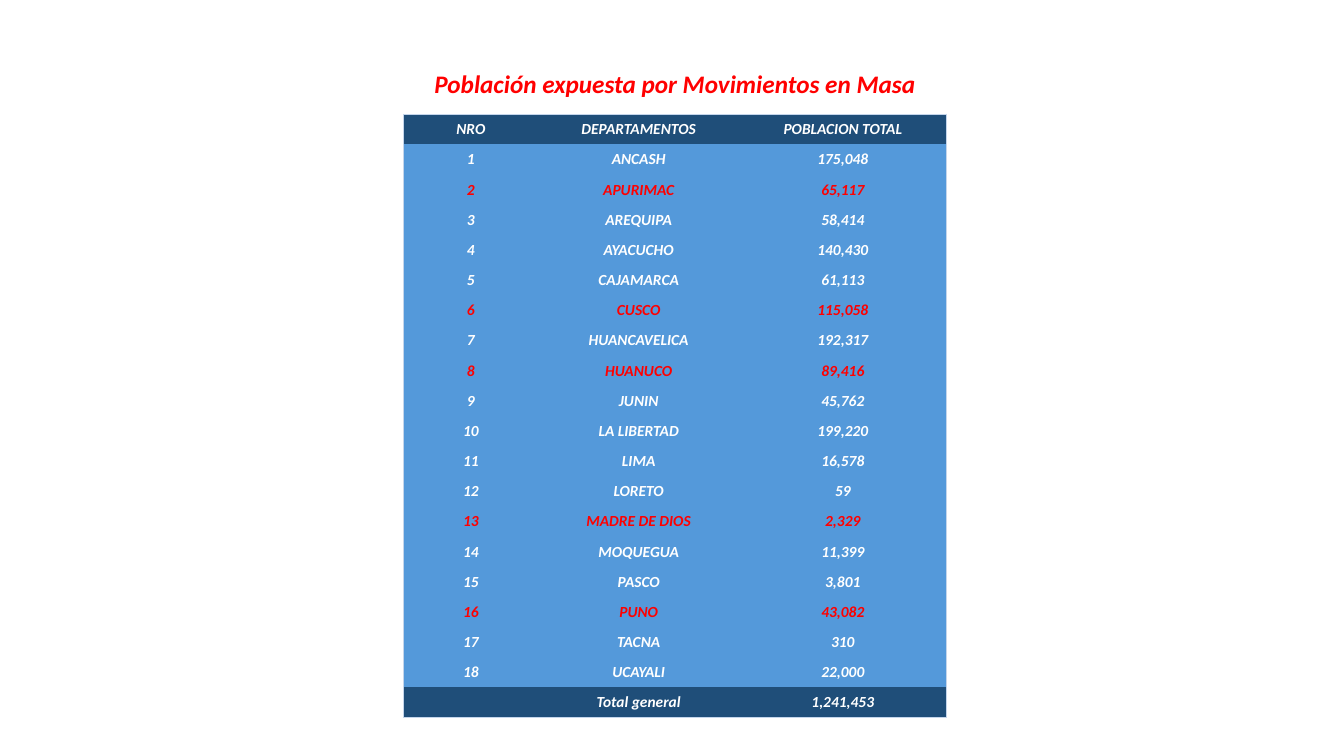
from lxml.etree import SubElement
from pptx import Presentation
from pptx.dml.color import RGBColor
from pptx.enum.text import MSO_ANCHOR, MSO_AUTO_SIZE, PP_ALIGN
from pptx.oxml.ns import qn
from pptx.util import Inches, Pt

COLORS = {
    "red": "FF0000",
    "white": "FFFFFF",
    "navy": "1F4E79",
    "blue": "5499DA",
    "border": "C4D5EB",
}
HEADER = ("NRO", "DEPARTAMENTOS", "POBLACION TOTAL")
DEPARTMENTS = [
    ("ANCASH", "175,048"),
    ("APURIMAC", "65,117"),
    ("AREQUIPA", "58,414"),
    ("AYACUCHO", "140,430"),
    ("CAJAMARCA", "61,113"),
    ("CUSCO", "115,058"),
    ("HUANCAVELICA", "192,317"),
    ("HUANUCO", "89,416"),
    ("JUNIN", "45,762"),
    ("LA LIBERTAD", "199,220"),
    ("LIMA", "16,578"),
    ("LORETO", "59"),
    ("MADRE DE DIOS", "2,329"),
    ("MOQUEGUA", "11,399"),
    ("PASCO", "3,801"),
    ("PUNO", "43,082"),
    ("TACNA", "310"),
    ("UCAYALI", "22,000"),
]
TOTAL = ("", "Total general", "1,241,453")
HIGHLIGHTED = {"APURIMAC", "CUSCO", "HUANUCO", "MADRE DE DIOS", "PUNO"}
COLUMN_WIDTHS = (1.34, 1.99, 2.06)
TABLE_HEIGHT = 5.99


def write_text(text_frame, text, size, color):
    paragraph = text_frame.paragraphs[0]
    paragraph.text = text
    paragraph.alignment = PP_ALIGN.CENTER
    font = paragraph.font
    font.name = "Calibri"
    font.size = Pt(size)
    font.bold = font.italic = True
    font.color.rgb = RGBColor.from_string(COLORS[color])


def add_title(slide, text):
    box = slide.shapes.add_textbox(Inches(4.18), Inches(0.63), Inches(5.03), Inches(0.4))
    box.text_frame.word_wrap = False
    box.text_frame.auto_size = MSO_AUTO_SIZE.SHAPE_TO_FIT_TEXT
    write_text(box.text_frame, text, 18, "red")


def set_borders(cell, outer_sides):
    properties = cell._tc.get_or_add_tcPr()
    for side in "LRTB":
        line = SubElement(properties, qn(f"a:ln{side}"), w=str(Pt(0.5)))
        if side in outer_sides:
            fill = SubElement(line, qn("a:solidFill"))
            SubElement(fill, qn("a:srgbClr"), val=COLORS["border"])
        else:
            SubElement(line, qn("a:noFill"))


def format_cell(cell, text, fill, color, outer_sides):
    set_borders(cell, outer_sides)
    cell.fill.solid()
    cell.fill.fore_color.rgb = RGBColor.from_string(COLORS[fill])
    cell.margin_left = cell.margin_right = cell.margin_top = Inches(0.01)
    cell.margin_bottom = 0
    cell.vertical_anchor = MSO_ANCHOR.MIDDLE
    write_text(cell.text_frame, text, 11, color)


def add_population_table(slide):
    numbered = [(str(number), *entry) for number, entry in enumerate(DEPARTMENTS, 1)]
    rows = [HEADER, *numbered, TOTAL]
    last_row, last_column = len(rows) - 1, len(HEADER) - 1
    table = slide.shapes.add_table(
        len(rows), len(HEADER), Inches(4), Inches(1.13),
        Inches(sum(COLUMN_WIDTHS)), Inches(TABLE_HEIGHT),
    ).table
    table.first_row = table.horz_banding = False
    for column, width in zip(table.columns, COLUMN_WIDTHS):
        column.width = Inches(width)

    for row_index, row in enumerate(rows):
        fill = "navy" if row_index in (0, last_row) else "blue"
        color = "red" if row[1] in HIGHLIGHTED else "white"
        row_sides = {0: "T", last_row: "B"}.get(row_index, "")
        for column_index, text in enumerate(row):
            column_side = {0: "L", last_column: "R"}.get(column_index, "")
            format_cell(table.cell(row_index, column_index), text, fill, color,
                        row_sides + column_side)


def main():
    presentation = Presentation()
    presentation.slide_width = Inches(13.33)
    presentation.slide_height = Inches(7.5)
    slide = presentation.slides.add_slide(presentation.slide_layouts[6])
    add_title(slide, "Población expuesta por Movimientos en Masa")
    add_population_table(slide)
    presentation.save("out.pptx")


if __name__ == "__main__":
    main()
